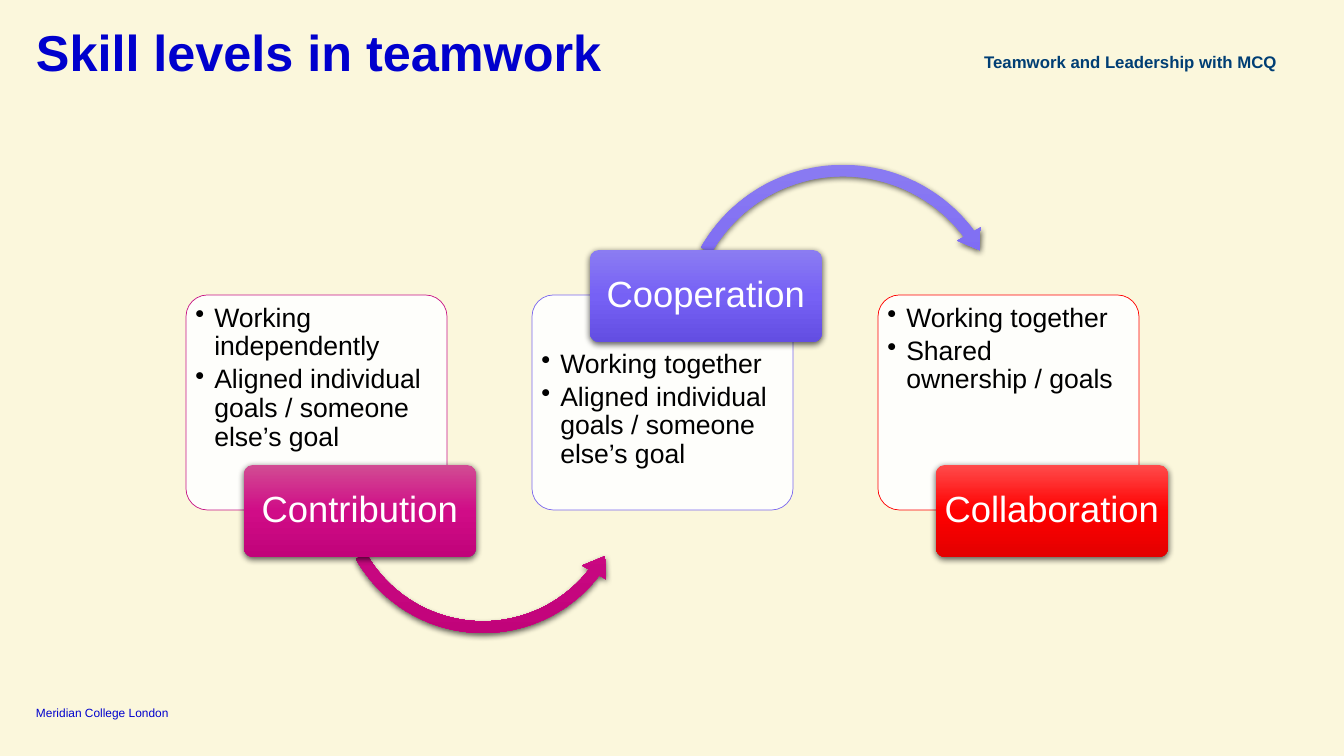
from lxml.etree import SubElement
from pptx import Presentation
from pptx.dml.color import RGBColor
from pptx.enum.shapes import MSO_SHAPE
from pptx.enum.text import MSO_ANCHOR, MSO_AUTO_SIZE, PP_ALIGN
from pptx.oxml import parse_xml
from pptx.oxml.ns import nsdecls, qn
from pptx.util import Emu, Pt

CREAM = RGBColor(0xFB, 0xF7, 0xDC)
BLUE = RGBColor(0x00, 0x00, 0xCD)
NAVY = RGBColor(0x00, 0x3E, 0x74)
WHITE = RGBColor(0xFF, 0xFF, 0xFF)
BLACK = RGBColor(0x00, 0x00, 0x00)
PINK = RGBColor(0xC7, 0x15, 0x85)
VIOLET = RGBColor(0x7B, 0x68, 0xEE)
RED = RGBColor(0xFF, 0x00, 0x00)
PINK_SHADES = (RGBColor(0xD1, 0x4C, 0x93), RGBColor(0xD0, 0x0C, 0x87), RGBColor(0xC1, 0x03, 0x7A))
VIOLET_SHADES = (RGBColor(0x8B, 0x7C, 0xF2), RGBColor(0x76, 0x61, 0xF5), RGBColor(0x63, 0x4E, 0xE2))
RED_SHADES = (RGBColor(0xFF, 0x4B, 0x4B), RGBColor(0xFF, 0x00, 0x00), RGBColor(0xE3, 0x00, 0x00))

EMU_PER_PX = 914400 / 100.8
FIRST_LEFT, COLUMN_PITCH = 186, 346
PANEL_TOP, PANEL_WIDTH, PANEL_HEIGHT = 295, 261, 215
LABEL_OFFSET, LABEL_WIDTH, LABEL_HEIGHT = 58, 232, 92
LABEL_HIGH, LABEL_LOW = 250, 465

LEVELS = [
    ("Contribution", ["Working independently", "Aligned individual goals / someone else’s goal"],
     PINK, PINK_SHADES, LABEL_LOW, 3,
     (MSO_SHAPE.LEFT_CIRCULAR_ARROW, (329, 333, 308, 308), (0.038, 4.775, 22.53, 90.245, 0.045))),
    ("Cooperation", ["Working together", "Aligned individual goals / someone else’s goal"],
     VIOLET, VIOLET_SHADES, LABEL_HIGH, 49,
     (MSO_SHAPE.CIRCULAR_ARROW, (672, 157, 342, 342), (0.034, 4.271, 193.974, 125.755, 0.04))),
    ("Collaboration", ["Working together", "Shared ownership / goals"],
     RED, RED_SHADES, LABEL_LOW, 3, None),
]


def px(value):
    return Emu(round(value * EMU_PER_PX))


class SlideBuilder:
    """Draws styled elements on the current slide, with lengths in px."""

    font = "Arial"

    def __init__(self, presentation):
        self.slide = presentation.slides.add_slide(presentation.slide_layouts[1])
        background = self.slide.background.fill
        background.solid()
        background.fore_color.rgb = CREAM

    def set_text(self, shape, lines, size, color, bold=False, align=PP_ALIGN.LEFT,
                 anchor=MSO_ANCHOR.TOP, margins=(0, 0, 0, 0), spacing=1.0, after=0,
                 bullet=False, wrap=True):
        frame = shape.text_frame
        frame.auto_size = MSO_AUTO_SIZE.NONE
        frame.word_wrap = wrap
        frame.vertical_anchor = anchor
        frame.margin_left, frame.margin_top, frame.margin_right, frame.margin_bottom = map(px, margins)
        for index, line in enumerate(lines):
            paragraph = frame.add_paragraph() if index else frame.paragraphs[0]
            paragraph.alignment = align
            paragraph.line_spacing = spacing
            paragraph.space_before = Pt(0)
            paragraph.space_after = Pt(after)
            properties = paragraph._p.get_or_add_pPr()
            indent = px(19) if bullet else 0
            properties.set("marL", str(indent))
            properties.set("indent", str(-indent))
            if bullet:
                SubElement(properties, qn("a:buChar")).set("char", "•")
            else:
                SubElement(properties, qn("a:buNone"))
            run = paragraph.add_run()
            run.text = line
            run.font.name = self.font
            run.font.size = Pt(size)
            run.font.bold = bold
            run.font.color.rgb = color

    def placeholder(self, index, box, text, size, color, **style):
        shape = self.slide.placeholders[index]
        shape.left, shape.top, shape.width, shape.height = map(px, box)
        self.set_text(shape, [text], size, color, bold=True, **style)

    def text(self, box, text, size, color, **style):
        shape = self.slide.shapes.add_textbox(*map(px, box))
        self.set_text(shape, [text], size, color, **style)

    def shape(self, kind, box, adjustments):
        shape = self.slide.shapes.add_shape(kind, *map(px, box))
        shape.shadow.inherit = False
        for index, value in enumerate(adjustments):
            shape.adjustments[index] = value
        return shape

    def panel(self, box, lines, outline, top_margin):
        shape = self.shape(MSO_SHAPE.ROUNDED_RECTANGLE, box, [0.1])
        shape.fill.solid()
        shape.fill.fore_color.rgb = WHITE
        color = shape._element.spPr.find(f"{qn('a:solidFill')}/{qn('a:srgbClr')}")
        SubElement(color, qn("a:alpha")).set("val", "90000")
        shape.line.color.rgb = outline
        shape.line.width = Pt(0.5)
        self.set_text(shape, lines, 19, BLACK, margins=(3, top_margin, 3, 3),
                      spacing=0.9, after=3, bullet=True)

    def glossy(self, kind, box, adjustments, shades):
        shape = self.shape(kind, box, adjustments)
        shape.line.fill.background()
        stops = "".join(f'<a:gs pos="{index * 50000}"><a:srgbClr val="{shade}"/></a:gs>'
                        for index, shade in enumerate(shades))
        properties = shape._element.spPr
        properties.find(qn("a:prstGeom")).addnext(parse_xml(
            f'<a:gradFill {nsdecls("a")} rotWithShape="1"><a:gsLst>{stops}</a:gsLst>'
            '<a:lin ang="5400000" scaled="0"/></a:gradFill>'))
        properties.find(qn("a:effectLst")).append(parse_xml(
            f'<a:outerShdw {nsdecls("a")} blurRad="57150" dist="19050" dir="5400000" '
            'algn="ctr" rotWithShape="0"><a:srgbClr val="000000">'
            '<a:alpha val="63000"/></a:srgbClr></a:outerShdw>'))
        return shape

    def label(self, box, text, shades):
        shape = self.glossy(MSO_SHAPE.ROUNDED_RECTANGLE, box, [0.1], shades)
        self.set_text(shape, [text], 26, WHITE, align=PP_ALIGN.CENTER, anchor=MSO_ANCHOR.MIDDLE,
                      margins=(5, 4, 5, 4), spacing=0.9, wrap=False)


def main():
    presentation = Presentation()
    presentation.slide_width, presentation.slide_height = px(1344), px(756)
    builder = SlideBuilder(presentation)
    builder.placeholder(0, (36, 28, 1272, 41), "Skill levels in teamwork", 36, BLUE, spacing=0.9)
    builder.placeholder(1, (932, 51, 345, 34), "Teamwork and Leadership with MCQ", 12, NAVY,
                        align=PP_ALIGN.RIGHT, spacing=1.05)
    builder.text((36, 705, 156, 15), "Meridian College London", 8.5, BLUE, anchor=MSO_ANCHOR.BOTTOM)
    for column, (name, lines, outline, shades, label_top, top_margin, arrow) in enumerate(LEVELS):
        left = FIRST_LEFT + column * COLUMN_PITCH
        builder.panel((left, PANEL_TOP, PANEL_WIDTH, PANEL_HEIGHT), lines, outline, top_margin)
        if arrow:
            builder.glossy(*arrow, shades)
        builder.label((left + LABEL_OFFSET, label_top, LABEL_WIDTH, LABEL_HEIGHT), name, shades)
    presentation.save("out.pptx")


if __name__ == "__main__":
    main()
